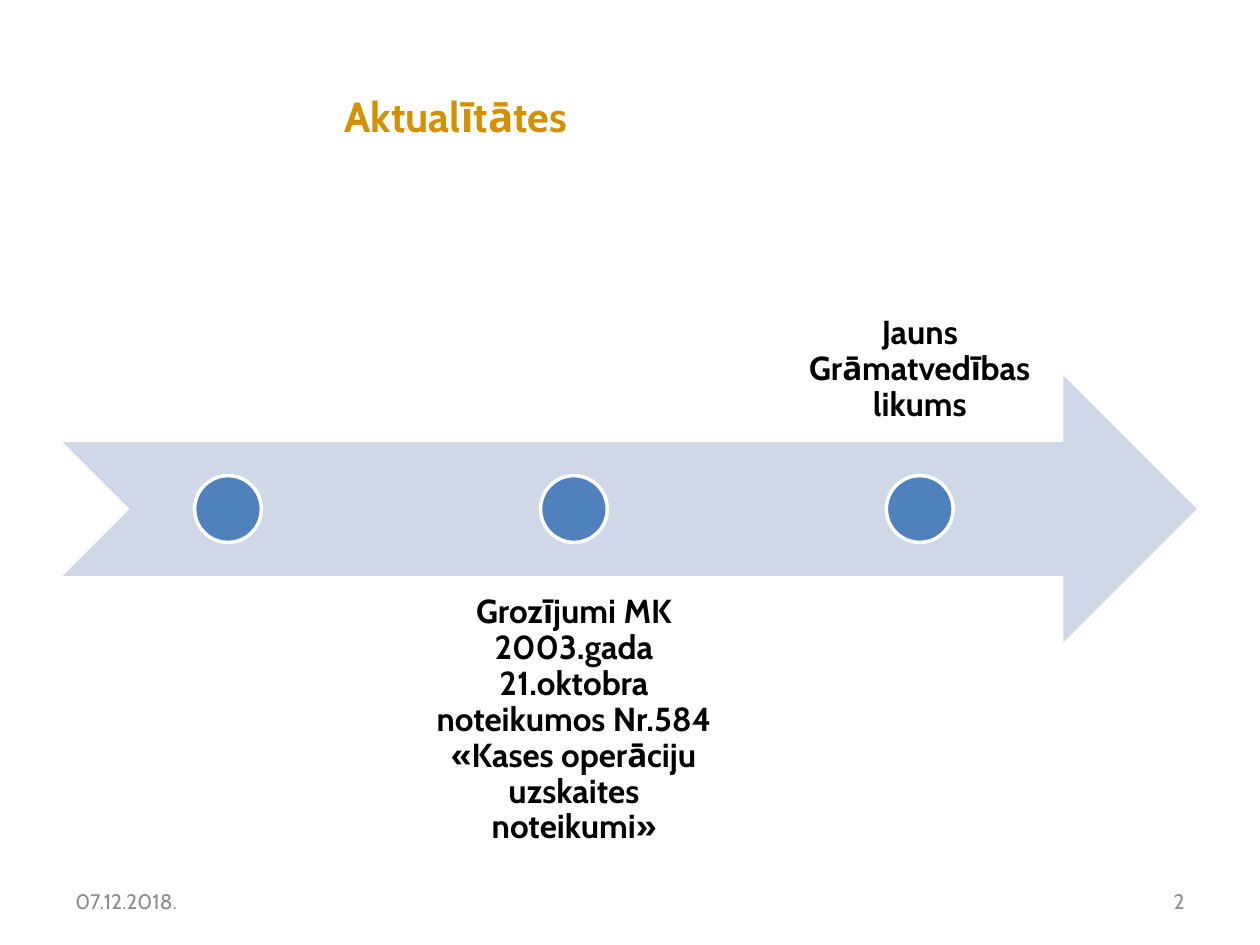
from pptx import Presentation
from pptx.dml.color import RGBColor
from pptx.enum.shapes import MSO_SHAPE as Preset
from pptx.enum.text import MSO_ANCHOR as Anchor, MSO_AUTO_SIZE as AutoSize, PP_ALIGN as Align
from pptx.util import Inches, Pt

FONT = "Cabin"
TITLE_ONLY = 5

ARROW_LEFT, ARROW_TOP, ARROW_WIDTH, BAND_HEIGHT = 0.5, 2.98, 9, 2.12
DOT_SIZE = 0.53
LABEL_WIDTH = 2.61
FIRST_CENTER, LAST_CENTER = 1.81, 7.3

# Label and whether it stands above the arrow; the first milestone has none.
MILESTONES = [
    (None, False),
    ("Grozījumi MK 2003.gada 21.oktobra noteikumos Nr.584 "
     "«Kases operāciju uzskaites noteikumi»", False),
    ("Jauns Grāmatvedības likums", True),
]

TITLE_FORMAT = {"size": Pt(24), "bold": True}
LABEL_FORMAT = {"size": Pt(19), "bold": True}
FOOTER_FORMAT = {"size": Pt(12), "bold": False}


def color(hex_value):
    return RGBColor.from_string(hex_value)


def write(frame, text, font_format, hex_value, align, anchor, inset=None):
    frame.text = text
    frame.word_wrap = True
    frame.auto_size = AutoSize.NONE
    frame.vertical_anchor = anchor
    if inset is not None:
        for side in ("left", "top", "right", "bottom"):
            setattr(frame, f"margin_{side}", Inches(inset))
    paragraph = frame.paragraphs[0]
    paragraph.alignment = align
    font = paragraph.runs[0].font
    font.name = FONT
    font.color.rgb = color(hex_value)
    for name, value in font_format.items():
        setattr(font, name, value)
    return paragraph


def add_title(slide, text):
    title = slide.shapes.title
    place = {"left": 0.51, "top": 0.68, "width": 6.22, "height": 0.47}
    for name, value in place.items():
        setattr(title, name, Inches(value))
    write(title.text_frame, text, TITLE_FORMAT, "D39001", Align.CENTER, Anchor.MIDDLE)


def add_filled(slide, preset, left, top, width, height, fill, outline=None):
    shape = slide.shapes.add_shape(
        preset, Inches(left), Inches(top), Inches(width), Inches(height))
    shape.shadow.inherit = False
    shape.fill.solid()
    shape.fill.fore_color.rgb = color(fill)
    if outline:
        shape.line.color.rgb = color(outline)
        shape.line.width = Pt(2)
    else:
        shape.line.fill.background()


def add_milestone(slide, center, label, above):
    dot_top = ARROW_TOP + (BAND_HEIGHT - DOT_SIZE) / 2
    add_filled(slide, Preset.OVAL, center - DOT_SIZE / 2, dot_top,
               DOT_SIZE, DOT_SIZE, "4F81BD", "FFFFFF")
    if not label:
        return
    label_top, anchor = (1.39, Anchor.BOTTOM) if above else (4.57, Anchor.TOP)
    box = slide.shapes.add_textbox(
        Inches(center - LABEL_WIDTH / 2), Inches(label_top),
        Inches(LABEL_WIDTH), Inches(BAND_HEIGHT))
    paragraph = write(box.text_frame, label, LABEL_FORMAT, "000000",
                      Align.CENTER, anchor, inset=0.15)
    paragraph.line_spacing = 0.9


def add_footer(slide, text, left, align):
    box = slide.shapes.add_textbox(Inches(left), Inches(6.95), Inches(2.33), Inches(0.4))
    write(box.text_frame, text, FOOTER_FORMAT, "8C8C8C", align, Anchor.MIDDLE)


def main():
    deck = Presentation()
    deck.slide_width, deck.slide_height = Inches(10), Inches(7.5)
    slide = deck.slides.add_slide(deck.slide_layouts[TITLE_ONLY])

    add_title(slide, "Aktualītātes")
    add_filled(slide, Preset.NOTCHED_RIGHT_ARROW, ARROW_LEFT, ARROW_TOP,
               ARROW_WIDTH, BAND_HEIGHT, "D0D8E8")
    step = (LAST_CENTER - FIRST_CENTER) / (len(MILESTONES) - 1)
    for index, (label, above) in enumerate(MILESTONES):
        add_milestone(slide, FIRST_CENTER + index * step, label, above)
    add_footer(slide, "07.12.2018.", 0.5, Align.LEFT)
    add_footer(slide, "2", 7.17, Align.RIGHT)

    deck.save("out.pptx")


if __name__ == "__main__":
    main()
